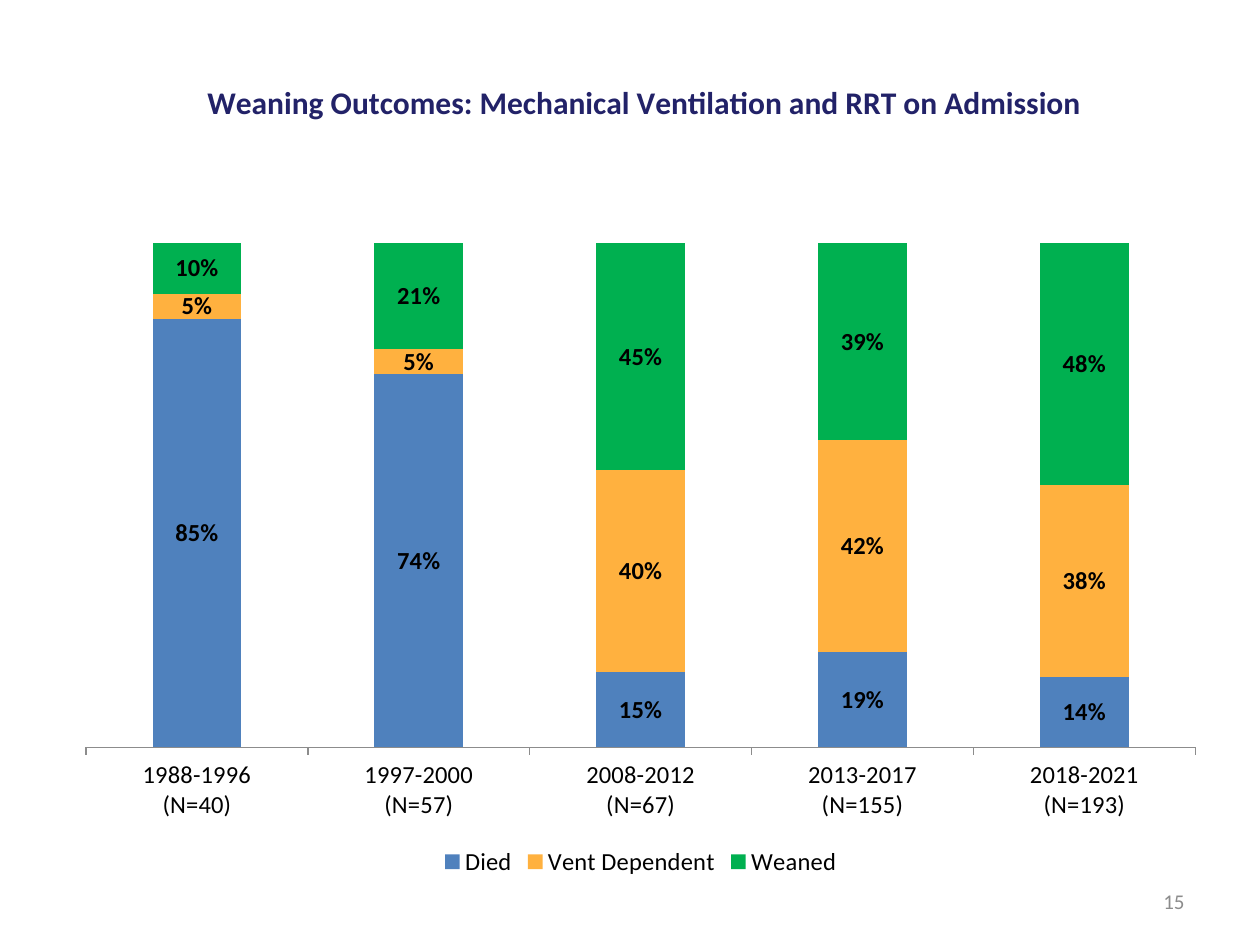
import pptx
import pptx.chart.data
import pptx.dml.color
import pptx.enum.chart
import pptx.enum.text
import pptx.oxml
import pptx.oxml.ns
import pptx.util

Inches = pptx.util.Inches
Pt = pptx.util.Pt
RGB = pptx.dml.color.RGBColor
enum = pptx.enum.chart

FONT = "Calibri"
BLACK = RGB(0x00, 0x00, 0x00)
NAVY = RGB(0x22, 0x22, 0x68)
GREY = RGB(0x8C, 0x8C, 0x8C)
BLUE = RGB(0x4F, 0x81, 0xBD)
AMBER = RGB(0xFF, 0xB1, 0x3F)
GREEN = RGB(0x00, 0xB0, 0x50)

TITLE = "Weaning Outcomes: Mechanical Ventilation and RRT on Admission"
YEARS = [("1988-1996", 40), ("1997-2000", 57), ("2008-2012", 67),
         ("2013-2017", 155), ("2018-2021", 193)]
SERIES = [
    ("Died", BLUE, (0.85, 0.74, 0.15, 0.19, 0.14)),
    ("Vent Dependent", AMBER, (0.05, 0.05, 0.40, 0.42, 0.38)),
    ("Weaned", GREEN, (0.10, 0.21, 0.45, 0.39, 0.48)),
]


def style(font, size, color=BLACK, bold=False):
    font.name = FONT
    font.size = Pt(size)
    font.bold = bold
    font.color.rgb = color


def layout(parent, index, **parts):
    """Fix a chart part at fractions of the chart area."""
    for old in parent.findall(pptx.oxml.ns.qn("c:layout")):
        parent.remove(old)
    inner = '<c:layoutTarget val="inner"/>' if "w" in parts else ""
    modes = "".join(f'<c:{key}Mode val="edge"/>' for key in "xy")
    sizes = "".join(f'<c:{key} val="{val}"/>' for key, val in parts.items())
    parent.insert(index, pptx.oxml.parse_xml(
        f'<c:layout {pptx.oxml.ns.nsdecls("c")}><c:manualLayout>'
        f'{inner}{modes}{sizes}</c:manualLayout></c:layout>'))


def add_bars(slide, left, top, width, height):
    # Data
    data = pptx.chart.data.CategoryChartData(number_format="0%")
    data.categories = [f"{years}\n(N={count})" for years, count in YEARS]
    for name, _, vals in SERIES:
        data.add_series(name, vals)
    chart = slide.shapes.add_chart(
        enum.XL_CHART_TYPE.COLUMN_STACKED,
        left, top, width, height, data).chart
    style(chart.font, 10)

    # Title
    chart.has_title = True
    run = chart.chart_title.text_frame.paragraphs[0].add_run()
    run.text = TITLE
    style(run.font, 18, NAVY, True)
    chart.chart_title.include_in_layout = False
    title = chart._chartSpace.chart.find(pptx.oxml.ns.qn("c:title"))
    layout(title, 1, x=0.12, y=0.04)

    # Axes
    value = chart.value_axis
    value.minimum_scale, value.maximum_scale = 0, 1
    value.has_major_gridlines = False
    value.visible = False
    cat = chart.category_axis
    cat.major_tick_mark = enum.XL_TICK_MARK.OUTSIDE
    cat.format.line.color.rgb = GREY
    style(cat.tick_labels.font, 14)

    # Bars and their labels
    plot = chart.plots[0]
    plot.gap_width = 150
    plot.overlap = 100
    plot.vary_by_categories = False
    for bar, (_, color, _) in zip(plot.series, SERIES):
        bar.format.fill.solid()
        bar.format.fill.fore_color.rgb = color
        labels = bar.data_labels
        labels.show_value = True
        labels.number_format = "0%"
        labels.number_format_is_linked = False
        style(labels.font, 14, bold=True)
    layout(chart._chartSpace.chart.plotArea, 0, x=0.02, y=0.24, w=0.96, h=0.6)

    # Legend
    chart.has_legend = True
    chart.legend.position = enum.XL_LEGEND_POSITION.BOTTOM
    chart.legend.include_in_layout = False
    style(chart.legend.font, 14)


def add_number(slide, left, top, width, height):
    frame = slide.shapes.add_textbox(left, top, width, height).text_frame
    frame.word_wrap = True
    frame.vertical_anchor = pptx.enum.text.MSO_ANCHOR.MIDDLE
    para = frame.paragraphs[0]
    para.alignment = pptx.enum.text.PP_ALIGN.RIGHT
    run = para.add_run()
    run.text = "15"
    style(run.font, 12, GREY)


def main():
    deck = pptx.Presentation()
    deck.slide_width, deck.slide_height = Inches(10), Inches(7.5)
    slide = deck.slides.add_slide(deck.slide_layouts[6])
    add_number(slide, Inches(7.17), Inches(6.95), Inches(2.33), Inches(0.4))
    add_bars(slide, Inches(0.5), Inches(0.33), Inches(9.17), Inches(6.67))
    deck.save("out.pptx")


if __name__ == "__main__":
    main()
